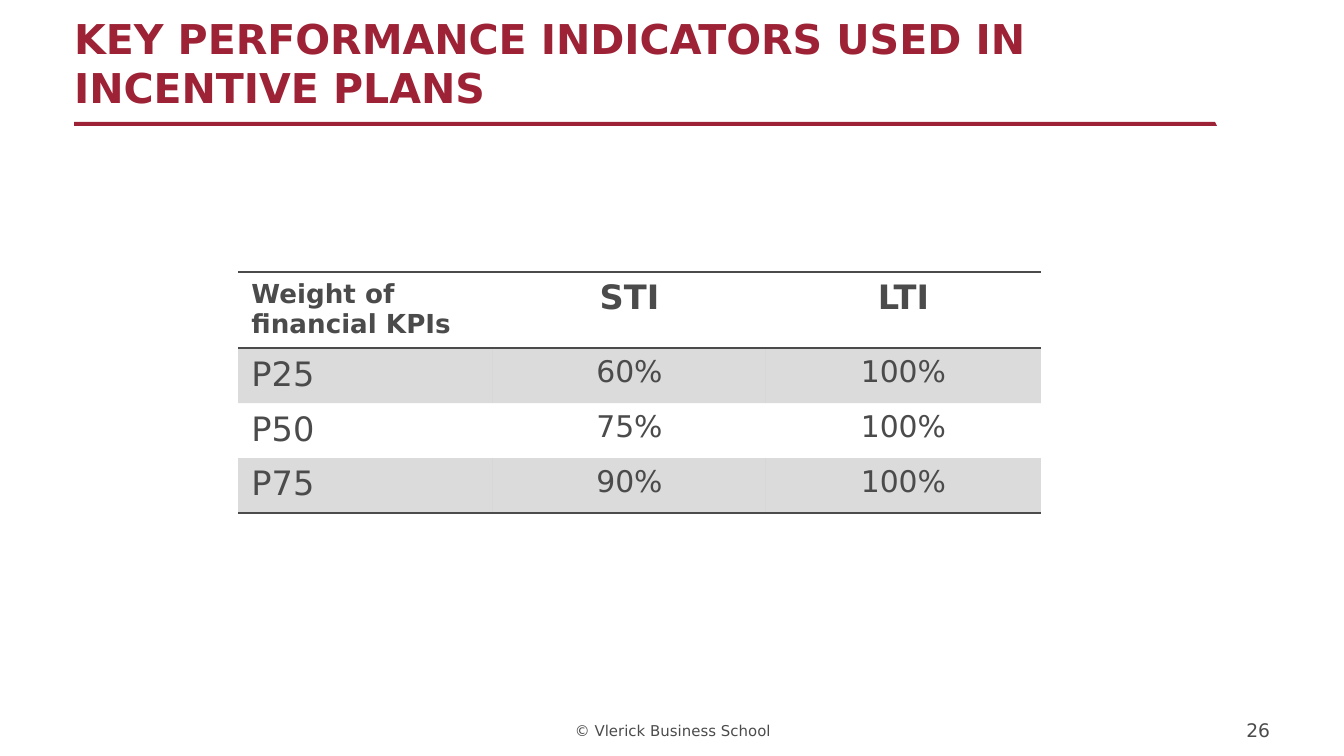
"""Build a slide with a table of financial KPI weights in incentive plans."""
from lxml.etree import SubElement
from pptx import Presentation
from pptx.dml.color import RGBColor
from pptx.enum.text import MSO_ANCHOR, PP_ALIGN
from pptx.oxml.ns import qn
from pptx.util import Pt

SCALE = 9144000 / 1344
THEME = {
    "font": "DejaVu Sans", "red": "9D2235", "grey": "4B4B4B",
    "title": 22, "column": 18, "label": 14, "value": 16, "number": 10, "footer": 8,
}


def px(n):
    return round(n * SCALE)


def write(tf, text, size, color="grey", bold=False, align=PP_ALIGN.LEFT):
    tf.word_wrap = True
    p = tf.paragraphs[0]
    p.alignment = align
    r = p.add_run()
    r.text = text
    r.font.name = THEME["font"]
    r.font.size = Pt(THEME[size])
    r.font.bold = bold
    r.font.color.rgb = RGBColor.from_string(THEME[color])


prs = Presentation()
prs.slide_width, prs.slide_height = px(1344), px(756)
s = prs.slides.add_slide(prs.slide_layouts[6])

texts = [
    ((530, 719, 286, 22), 1, "© Vlerick Business School",
     {"size": "footer", "align": PP_ALIGN.CENTER}),
    ((74, 0, 1111, 112), 0, "KEY PERFORMANCE INDICATORS USED IN INCENTIVE PLANS",
     {"size": "title", "color": "red", "bold": True}),
    ((1196, 719, 74, 22), 0, "26", {"size": "number", "align": PP_ALIGN.RIGHT}),
]
for box, bottom, text, style in texts:
    tf = s.shapes.add_textbox(*map(px, box)).text_frame
    tf.margin_left = tf.margin_right = tf.margin_top = 0
    tf.margin_bottom = px(bottom)
    tf.vertical_anchor = MSO_ANCHOR.BOTTOM
    write(tf, text, **style)

fb = s.shapes.build_freeform(74, 122, scale=SCALE)
fb.add_line_segments([(1215, 122), (1217, 126), (74, 126)], close=True)
rule = fb.convert_to_shape()
rule.shadow.inherit = False
rule.fill.solid()
rule.fill.fore_color.rgb = RGBColor.from_string(THEME["red"])
rule.line.fill.background()

rows = [
    ("Weight of financial KPIs", "STI", "LTI"),
    ("P25", "60%", "100%"),
    ("P50", "75%", "100%"),
    ("P75", "90%", "100%"),
]
widths, heights = (255, 273, 275), (74, 55, 55, 55)
frame = s.shapes.add_table(len(rows), len(widths), px(238), px(272),
                           px(sum(widths)), px(sum(heights)))
table = frame.table
table.first_row = table.horz_banding = False
style_id = table._tbl.tblPr.find(qn("a:tableStyleId"))
style_id.text = "{2D5ABB26-0587-4C30-8999-92F81FD0307C}"
for column, width in zip(table.columns, widths):
    column.width = px(width)
for row, height in zip(table.rows, heights):
    row.height = px(height)

borders = {0: ("a:lnT", "a:lnB"), len(rows) - 1: ("a:lnB",)}
for i, values in enumerate(rows):
    for j, text in enumerate(values):
        cell = table.cell(i, j)
        header, label = i == 0, j == 0
        size = "label" if header and label else "column" if header or label else "value"
        write(cell.text_frame, text, size, bold=header,
              align=PP_ALIGN.LEFT if label else PP_ALIGN.CENTER)
        tcPr = cell._tc.get_or_add_tcPr()
        for side in borders.get(i, ()):
            ln = SubElement(tcPr, qn(side), w=str(Pt(1)))
            fill = SubElement(ln, qn("a:solidFill"))
            SubElement(fill, qn("a:srgbClr"), val=THEME["grey"])
        if i % 2:
            cell.fill.solid()
            cell.fill.fore_color.rgb = RGBColor.from_string(THEME["grey"])
            color = tcPr.find(qn("a:solidFill")).find(qn("a:srgbClr"))
            SubElement(color, qn("a:alpha"), val="20000")
        else:
            cell.fill.background()

prs.save("out.pptx")
